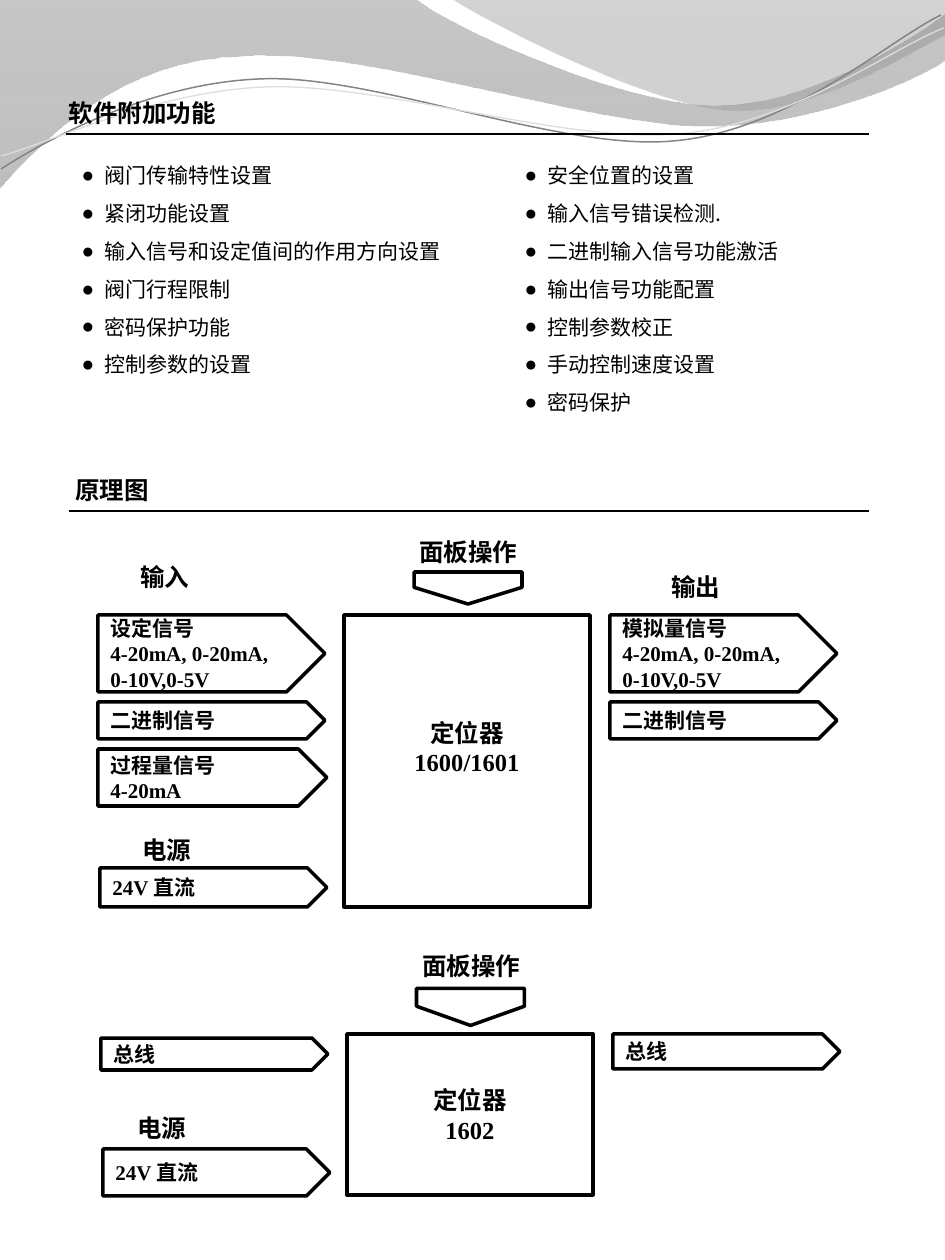
from dataclasses import dataclass
from lxml.etree import SubElement
from pptx import Presentation
from pptx.dml.color import RGBColor
from pptx.enum.shapes import MSO_CONNECTOR, MSO_SHAPE
from pptx.enum.text import MSO_ANCHOR, MSO_AUTO_SIZE, PP_ALIGN
from pptx.oxml.ns import qn
from pptx.util import Pt

PX = 914400 / 126


@dataclass(frozen=True)
class Theme:
    ink: str = "000000"
    paper: str = "FFFFFF"
    head: int = 14
    body: int = 12
    rule: float = 1.5
    edge: float = 2
    han: str = "Noto Sans CJK SC"
    latin: str = "Times New Roman"
    dot: str = "Arial"


T = Theme()

# Content: boxes are left, top, width, height in px; "|" parts runs
TITLE = ("软件附加功能", (56, 92, 227, 43))
HEAD = ("原理图", (63, 469, 281, 43))
LISTS = [
    ((69, 144, 423, 280), ["阀门传输特性设置", "紧闭功能设置",
                           "输入信号和设定值间的作用方向设置", "阀门行程限制",
                           "密码保护功能", "控制参数的设置"]),
    ((512, 144, 358, 280), ["安全位置的设置", "输入信号错误检测.",
                            "二进制输入信号功能激活", "输出信号功能配置",
                            "控制参数校正", "手动控制速度设置", "密码保护"]),
]
RULES = [(66, 134), (69, 511)]
RIGHT = 869
UNITS = [  # box, lines, bottom inset
    ((344, 615, 246, 292), ["定位器", "1600/1601"], 34),
    ((347, 1034, 246, 161), ["定位器", "1602"], 6),
]
RANGE = ["4-20mA, 0-20mA,", "0-10V,0-5V"]
PLATES = [
    ((98, 615, 227, 77), ["设定信号"] + RANGE),
    ((98, 702, 227, 37), ["二进制信号"]),
    ((98, 749, 229, 57), ["过程量信号", "4-20mA"]),
    ((100, 868, 227, 39), ["24V |直流"]),
    ((610, 615, 227, 77), ["模拟量信号"] + RANGE),
    ((610, 702, 227, 37), ["二进制信号"]),
    ((101, 1038, 227, 32), ["总线"]),
    ((103, 1149, 227, 47), ["24V |直流"]),
    ((613, 1034, 227, 35), ["总线"]),
]
DOWN = [(452, 534, 32, 108), (452, 953, 37, 108)]
LABELS = [
    ("输入", (128, 556, 74, 43)), ("输出", (659, 566, 74, 43)),
    ("面板操作", (407, 531, 125, 43)), ("电源", (130, 829, 74, 43)),
    ("面板操作", (410, 945, 125, 43)), ("电源", (125, 1107, 74, 43)),
]
# Waves: start, then steps of one point (line) or three (curve)
BANDS = [
    ((0, -1), [[(416, -1)], [(450, 28), (627, 106), (717, 106)],
               [(806, 106), (906, 43), (945, 15)], [(946, 60)],
               [(930, 73), (822, 127), (704, 127)],
               [(587, 126), (360, 47), (243, 57)],
               [(122, 59), (43, 140), (-1, 190)]],
     [(0, "848484", 45), (1, "888888", 55)]),
    ((452, -1), [[(481, 19), (644, 103), (727, 110)],
                 [(809, 116), (908, 54), (945, 35)], [(945, 0)]],
     [(0, "6F6F6F", 30), (0.8, "9D9D9D", 45)]),
]
THREADS = [
    ((1, 169), [[(45, 141), (149, 83), (261, 79)],
                [(373, 74), (561, 152), (674, 141)],
                [(789, 131), (886, 42), (941, 15)]], "848484", 0.85),
    ((1, 156), [[(45, 145), (154, 91), (267, 87)],
                [(381, 83), (566, 144), (678, 134)],
                [(791, 125), (888, 50), (944, 28)]], "DDDDDD", 0.75),
]


def emu(*vals):
    return [round(v * PX) for v in vals]


def rgb(hue):
    return RGBColor.from_string(hue)


def stroke(shape, hue, width):
    shape.line.color.rgb = rgb(hue)
    shape.line.width = Pt(width)


def write(frame, lines, size, bold=True, align=PP_ALIGN.LEFT):
    for i, line in enumerate(lines):
        para = frame.paragraphs[0] if i == 0 else frame.add_paragraph()
        para.alignment = align
        for part in line.split("|"):
            run = para.add_run()
            run.text = part
            font = run.font
            font.size, font.bold = Pt(size), bold
            font.color.rgb = rgb(T.ink)
            font.name = T.latin if part[0].isascii() else T.han
            SubElement(run._r.get_or_add_rPr(), qn("a:ea"),
                       typeface=font.name)


def trace(shapes, start, steps, close):
    pen = shapes.build_freeform(*emu(*start), scale=1.0)
    pen.add_line_segments([emu(*step[-1]) for step in steps], close=close)
    shape = pen.convert_to_shape()
    shape.shadow.inherit = False
    # Bend the three-point steps into curves
    lines = list(shape.element.iter(qn("a:lnTo")))
    for node, step in zip(lines, steps):
        if len(step) == 3:
            node.tag = qn("a:cubicBezTo")
            for i, spot in enumerate(step[:2]):
                x, y = emu(*spot)
                dot = SubElement(node, qn("a:pt"), x=str(x - shape.left),
                                 y=str(y - shape.top))
                node.insert(i, dot)
    return shape


def place(shape, box):
    shape.left, shape.top, shape.width, shape.height = emu(*box)


def label(shapes, text, box, wrap):
    frame = shapes.add_textbox(*emu(*box)).text_frame
    frame.word_wrap = wrap
    frame.auto_size = MSO_AUTO_SIZE.SHAPE_TO_FIT_TEXT
    write(frame, [text], T.head)


def block(shapes, kind, box):
    shape = shapes.add_shape(kind, *emu(*box))
    shape.shadow.inherit = False
    shape.fill.solid()
    shape.fill.fore_color.rgb = rgb(T.paper)
    stroke(shape, T.ink, T.edge)
    frame = shape.text_frame
    frame.word_wrap = True
    frame.vertical_anchor = MSO_ANCHOR.MIDDLE
    return shape


def main():
    deck = Presentation()
    deck.slide_width, deck.slide_height = emu(945, 1260)
    slide = deck.slides.add_slide(deck.slide_layouts[3])
    shapes = slide.shapes
    title, *bodies = list(slide.placeholders)

    # Waves
    for start, steps, stops in BANDS:
        band = trace(shapes, start, steps, True)
        band.line.fill.background()
        band.fill.gradient()
        band.fill.gradient_angle = 270
        for stop, (spot, hue, _) in zip(band.fill.gradient_stops, stops):
            stop.position = spot
            stop.color.rgb = rgb(hue)
        for node, stop in zip(band.element.iter(qn("a:srgbClr")), stops):
            SubElement(node, qn("a:alpha"), val=str(stop[2] * 1000))
    for start, steps, hue, width in THREADS:
        thread = trace(shapes, start, steps, False)
        thread.fill.background()
        stroke(thread, hue, width)

    # Title and lists, in front of the waves
    for holder in (title, *bodies):
        holder.element.getparent().append(holder.element)
        holder.text_frame.vertical_anchor = MSO_ANCHOR.TOP
        holder.text_frame.auto_size = MSO_AUTO_SIZE.NONE
    place(title, TITLE[1])
    write(title.text_frame, [TITLE[0]], T.head)
    for body, (box, items) in zip(bodies, LISTS):
        place(body, box)
        write(body.text_frame, items, T.body, bold=False)
        for para in body.text_frame.paragraphs:
            para.line_spacing = 1.5
            para.space_before = Pt(0)
            props = para._p.get_or_add_pPr()
            props.set("marL", str(emu(23)[0]))
            props.set("indent", str(emu(-23)[0]))
            SubElement(props, qn("a:buFont"), typeface=T.dot)
            SubElement(props, qn("a:buChar"), char="●")

    # Second heading and rules
    label(shapes, *HEAD, True)
    for left, y in RULES:
        rule = shapes.add_connector(MSO_CONNECTOR.STRAIGHT,
                                    *emu(left, y, RIGHT, y))
        stroke(rule, T.ink, T.rule)
        SubElement(rule.element.spPr, qn("a:effectLst"))

    # Block diagrams
    for box, lines, inset in UNITS:
        frame = block(shapes, MSO_SHAPE.RECTANGLE, box).text_frame
        frame.margin_bottom = emu(inset)[0]
        write(frame, lines, T.head, align=PP_ALIGN.CENTER)
    for box, lines in PLATES:
        write(block(shapes, MSO_SHAPE.PENTAGON, box).text_frame, lines, T.body)
    for box in DOWN:
        arrow = block(shapes, MSO_SHAPE.PENTAGON, box)
        arrow.rotation = 90
        arrow.adjustments[0] = 0.52
    for text, box in LABELS:
        label(shapes, text, box, False)

    deck.save("out.pptx")


if __name__ == "__main__":
    main()
